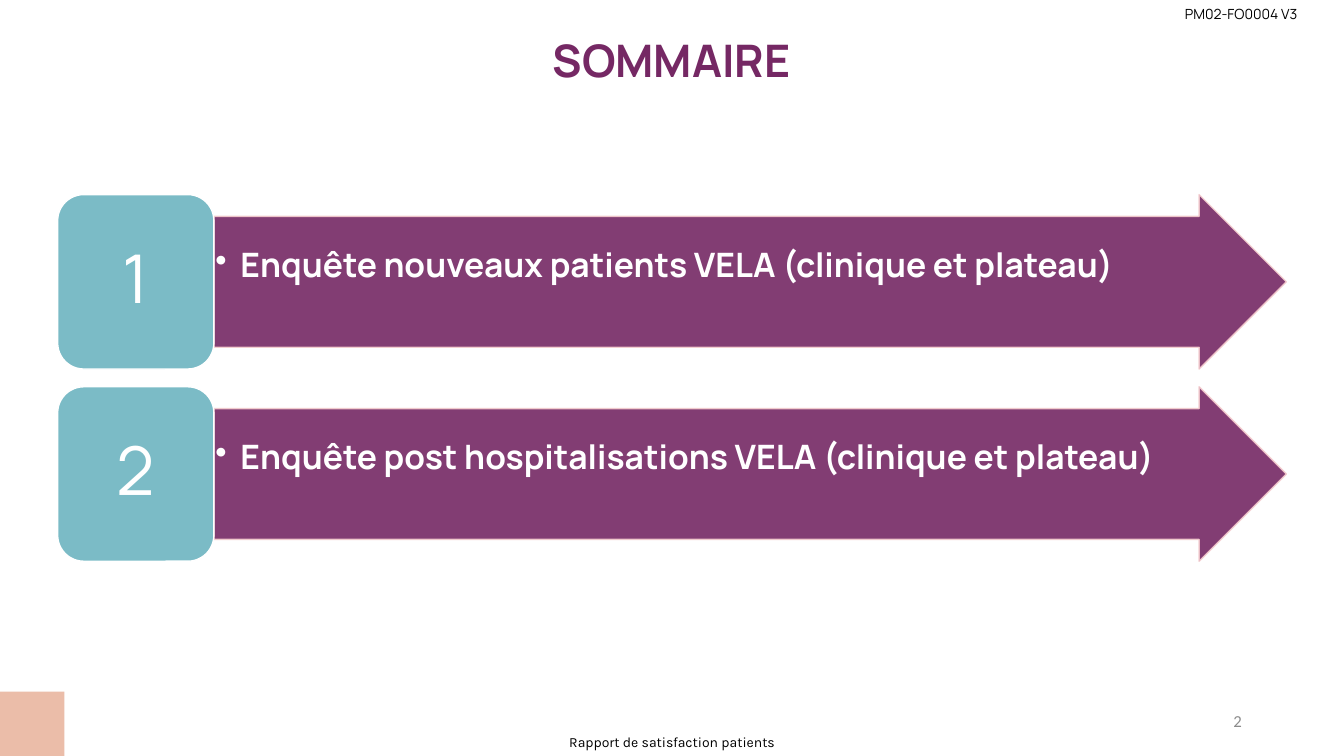
from dataclasses import dataclass

import lxml.etree
import pptx
import pptx.dml.color
import pptx.enum.shapes
import pptx.enum.text
import pptx.oxml.ns
import pptx.util

Pt = pptx.util.Pt
Align = pptx.enum.text.PP_ALIGN
Anchor = pptx.enum.text.MSO_ANCHOR
Shape = pptx.enum.shapes.MSO_SHAPE

COLORS = {
    "plum": "752864",
    "teal": "7BBBC6",
    "peach": "EBBDA9",
    "blush": "F4CCCE",
    "white": "FFFFFF",
    "black": "000000",
    "grey": "8C8C8C",
}

SECTION_TOP = 139
SECTION_PITCH = 137.3
SECTION_HEIGHT = 124.6
NUMBER_LEFT = 41.2
NUMBER_WIDTH = 111.6
ARROW_WIDTH = 766


@dataclass
class Section:
    number: int
    label: str


@dataclass
class Note:
    text: str
    left: float
    top: float
    width: float
    height: float
    font: str
    size: float
    color: str
    align: Align = Align.CENTER
    anchor: Anchor = Anchor.TOP


SECTIONS = [
    Section(1, "Enquête nouveaux patients VELA (clinique et plateau)"),
    Section(2, "Enquête post hospitalisations VELA (clinique et plateau)"),
]

NOTES = [
    Note("Rapport de satisfaction patients", 240, 520.6, 480, 19.4, "Karla", 10, "black"),
    Note("2", 678.2, 500.4, 216, 28.8, "Calibri", 12, "grey", Align.RIGHT, Anchor.MIDDLE),
    Note("PM02-FO0004 V3", 813, 0.7, 147, 19.4, "Manrope", 10, "black"),
]


def rgb(name: str) -> pptx.dml.color.RGBColor:
    return pptx.dml.color.RGBColor.from_string(COLORS[name])


def write(shape, text: str, font: str, size: float, color: str,
          align: Align, anchor: Anchor, bold: bool = False):
    """Put one formatted paragraph in a shape and return it."""
    frame = shape.text_frame
    frame.word_wrap = True
    frame.vertical_anchor = anchor
    para = frame.paragraphs[0]
    para.text = text
    para.alignment = align
    para.font.name = font
    para.font.size = Pt(size)
    para.font.bold = bold
    para.font.color.rgb = rgb(color)
    return para


def set_insets(shape, left: float, top: float, right: float, bottom: float) -> None:
    frame = shape.text_frame
    frame.margin_left, frame.margin_top = Pt(left), Pt(top)
    frame.margin_right, frame.margin_bottom = Pt(right), Pt(bottom)


def add_block(page, kind: Shape, left: float, top: float, width: float,
              height: float, fill: str, line: str = ""):
    block = page.shapes.add_shape(kind, Pt(left), Pt(top), Pt(width), Pt(height))
    block.shadow.inherit = False
    block.fill.solid()
    block.fill.fore_color.rgb = rgb(fill)
    if line:
        block.line.color.rgb = rgb(line)
        block.line.width = Pt(1)
    else:
        block.line.fill.background()
    return block


def set_opacity(shape, percent: int) -> None:
    """Apply the same opacity to the fill and the outline."""
    qn = pptx.oxml.ns.qn
    for color in shape.fill._xPr.iter(qn("a:srgbClr")):
        lxml.etree.SubElement(color, qn("a:alpha")).set("val", str(percent * 1000))


def add_bullet(para, indent: float) -> None:
    properties = para._p.get_or_add_pPr()
    properties.set("marL", str(Pt(indent)))
    properties.set("indent", str(-Pt(indent)))
    bullet = lxml.etree.SubElement(properties, pptx.oxml.ns.qn("a:buChar"))
    bullet.set("char", "•")
    # The bullet must come before the default run properties
    properties.insert(properties.index(bullet) - 1, bullet)


def add_section(page, section: Section, top: float) -> None:
    arrow = add_block(page, Shape.RIGHT_ARROW, NUMBER_LEFT + NUMBER_WIDTH, top,
                      ARROW_WIDTH, SECTION_HEIGHT, "plum", "blush")
    arrow.adjustments[0] = 0.75
    arrow.adjustments[1] = 0.5
    set_opacity(arrow, 90)
    set_insets(arrow, 1, 23, 0, 0)
    label = write(arrow, section.label, "Manrope", 24, "white",
                  Align.LEFT, Anchor.TOP, bold=True)
    label.line_spacing = 0.9
    add_bullet(label, 18)

    tile = add_block(page, Shape.ROUNDED_RECTANGLE, NUMBER_LEFT, top,
                     NUMBER_WIDTH, SECTION_HEIGHT, "teal", "white")
    set_insets(tile, 0, 0, 0, 0)
    number = write(tile, str(section.number), "Manrope", 48, "white",
                   Align.CENTER, Anchor.MIDDLE)
    number.line_spacing = 0.9


def add_note(page, note: Note) -> None:
    box = page.shapes.add_textbox(Pt(note.left), Pt(note.top), Pt(note.width), Pt(note.height))
    write(box, note.text, note.font, note.size, note.color, note.align, note.anchor)


def main() -> None:
    deck = pptx.Presentation()
    deck.slide_width, deck.slide_height = Pt(960), Pt(540)
    page = deck.slides.add_slide(deck.slide_layouts[5])

    # Title
    title = page.shapes.title
    title.left, title.top, title.width, title.height = Pt(115.2), Pt(23), Pt(729.4), Pt(38.9)
    set_insets(title, 0, 0, 0, 0)
    write(title, "SOMMAIRE", "Manrope", 32, "plum", Align.CENTER, Anchor.MIDDLE, bold=True)

    # Corner accent
    add_block(page, Shape.RECTANGLE, 0, 494, 46, 46, "peach")

    # Numbered sections
    for index, section in enumerate(SECTIONS):
        add_section(page, section, SECTION_TOP + index * SECTION_PITCH)

    # Footer, page number and document reference
    for note in NOTES:
        add_note(page, note)

    deck.save("out.pptx")


if __name__ == "__main__":
    main()
